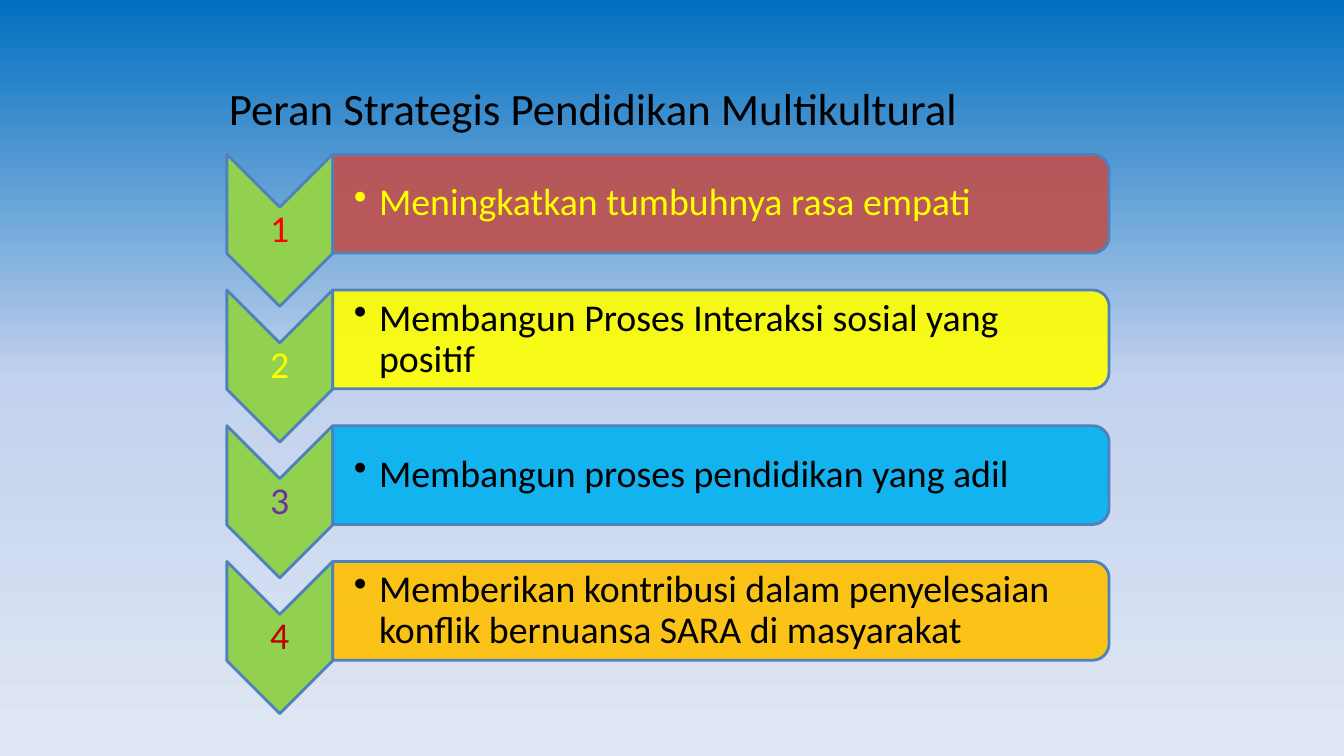
from copy import deepcopy

from pptx import Presentation
from pptx.dml.color import RGBColor
from pptx.enum.shapes import MSO_SHAPE as Shape
from pptx.enum.text import MSO_ANCHOR as Anchor, MSO_AUTO_SIZE as AutoSize, PP_ALIGN as Align
from pptx.oxml import parse_xml
from pptx.oxml.ns import nsdecls
from pptx.util import Inches, Pt

BLACK = RGBColor(0x00, 0x00, 0x00)
RED = RGBColor(0xFF, 0x00, 0x00)
YELLOW = RGBColor(0xFF, 0xFF, 0x00)
PURPLE = RGBColor(0x70, 0x30, 0xA0)
DARK_RED = RGBColor(0xC0, 0x00, 0x00)
BRICK = RGBColor(0xC0, 0x50, 0x4D)
SKY = RGBColor(0x00, 0xB0, 0xF0)
AMBER = RGBColor(0xFF, 0xC0, 0x00)
GREEN = RGBColor(0x92, 0xD0, 0x50)
OUTLINE = RGBColor(0x4F, 0x81, 0xBD)
BACKGROUND = [
    (0, RGBColor(0x00, 0x70, 0xC0)),
    (0.5, RGBColor(0xC2, 0xD1, 0xED)),
    (1, RGBColor(0xE1, 0xE8, 0xF5)),
]

FONT = "Calibri"
TITLE = "Peran Strategis Pendidikan Multikultural"
ROLES = [
    ("Meningkatkan tumbuhnya rasa empati", RED, BRICK, YELLOW),
    ("Membangun Proses Interaksi sosial yang positif", YELLOW, YELLOW, BLACK),
    ("Membangun proses pendidikan yang adil", PURPLE, SKY, BLACK),
    ("Memberikan kontribusi dalam penyelesaian konflik bernuansa SARA di masyarakat",
     DARK_RED, AMBER, BLACK),
]
FIRST_TOP, LAST_TOP = 1.76, 5.8


def set_format(target, values):
    """Set each named attribute of the target."""
    for name, value in values.items():
        setattr(target, name, value)


def inches(*lengths):
    """Turn plain numbers into lengths."""
    return [Inches(length) for length in lengths]


def paint_background(slide):
    """Fill the slide with a vertical gradient of three stops."""
    fill = slide.background.fill
    fill.gradient()
    fill.gradient_angle = 270
    stop_list = slide.element.xpath(".//p:bg//a:gsLst")[0]
    stop_list.insert(1, deepcopy(stop_list[0]))
    for stop, (position, color) in zip(fill.gradient_stops, BACKGROUND):
        stop.position = position
        stop.color.rgb = color


def write(para, text, size, color):
    """Add one formatted span of text to a paragraph."""
    span = para.add_run()
    span.text = text
    set_format(span.font, {"name": FONT, "size": Pt(size)})
    span.font.color.rgb = color


def add_title(slide):
    """Place and fill the title placeholder."""
    title = slide.shapes.title
    left, top, width, height = inches(2.17, 0.72, 9, 0.7)
    set_format(title, {"left": left, "top": top, "width": width, "height": height})
    set_format(title.text_frame, {"vertical_anchor": Anchor.MIDDLE, "auto_size": AutoSize.NONE})
    para = title.text_frame.paragraphs[0]
    para.alignment = Align.LEFT
    write(para, TITLE, 32, BLACK)


def add_turned_shape(slide, kind, place, color):
    """Add an outlined shape turned a quarter clockwise."""
    shape = slide.shapes.add_shape(kind, *inches(*place))
    shape.rotation = 90
    shape.shadow.inherit = False
    shape.fill.solid()
    shape.fill.fore_color.rgb = color
    shape.line.color.rgb = OUTLINE
    shape.line.width = Pt(2)
    return shape


def make_translucent(shape, percent):
    """Set the opacity of a solid fill."""
    color = shape.element.xpath("p:spPr/a:solidFill/a:srgbClr")[0]
    color.append(parse_xml(f'<a:alpha {nsdecls("a")} val="{percent * 1000}"/>'))


def add_label(slide, place, text, color, align, left_margin=0.02):
    """Add a wrapped text box and return its paragraph."""
    frame = slide.shapes.add_textbox(*inches(*place)).text_frame
    margin = Inches(0.02)
    set_format(frame, {
        "word_wrap": True, "vertical_anchor": Anchor.MIDDLE,
        "margin_left": Inches(left_margin), "margin_right": margin,
        "margin_top": margin, "margin_bottom": margin,
    })
    para = frame.paragraphs[0]
    set_format(para, {"alignment": align, "line_spacing": 0.9})
    write(para, text, 27, color)
    return para


def add_bullet(para):
    """Give a paragraph a hanging round bullet."""
    para.level = 1
    properties = para._p.get_or_add_pPr()
    properties.set("marL", str(Inches(0.25)))
    properties.set("indent", str(Inches(-0.25)))
    properties.append(parse_xml(f'<a:buChar {nsdecls("a")} char="•"/>'))


def add_role(slide, number, top, role):
    """Add one numbered chevron with its bar and bullet text."""
    text, number_color, bar_color, text_color = role
    add_turned_shape(slide, Shape.CHEVRON, (2.02, top, 1.51, 1.05), GREEN)
    add_label(slide, (2.25, top + 0.3, 1.05, 0.45), str(number), number_color, Align.CENTER)
    bar = add_turned_shape(slide, Shape.ROUND_2_SAME_RECTANGLE,
                           (6.66, top - 3.59, 0.98, 7.7), bar_color)
    make_translucent(bar, 90)
    para = add_label(slide, (3.3, top - 0.18, 7.65, 0.88), text, text_color, Align.LEFT, 0.21)
    add_bullet(para)


def main():
    """Build and save the slide."""
    deck = Presentation()
    set_format(deck, {"slide_width": Inches(13.33), "slide_height": Inches(7.5)})
    slide = deck.slides.add_slide(deck.slide_layouts[5])
    paint_background(slide)
    add_title(slide)
    pitch = (LAST_TOP - FIRST_TOP) / (len(ROLES) - 1)
    for index, role in enumerate(ROLES):
        add_role(slide, index + 1, FIRST_TOP + index * pitch, role)
    deck.save("out.pptx")


if __name__ == "__main__":
    main()
